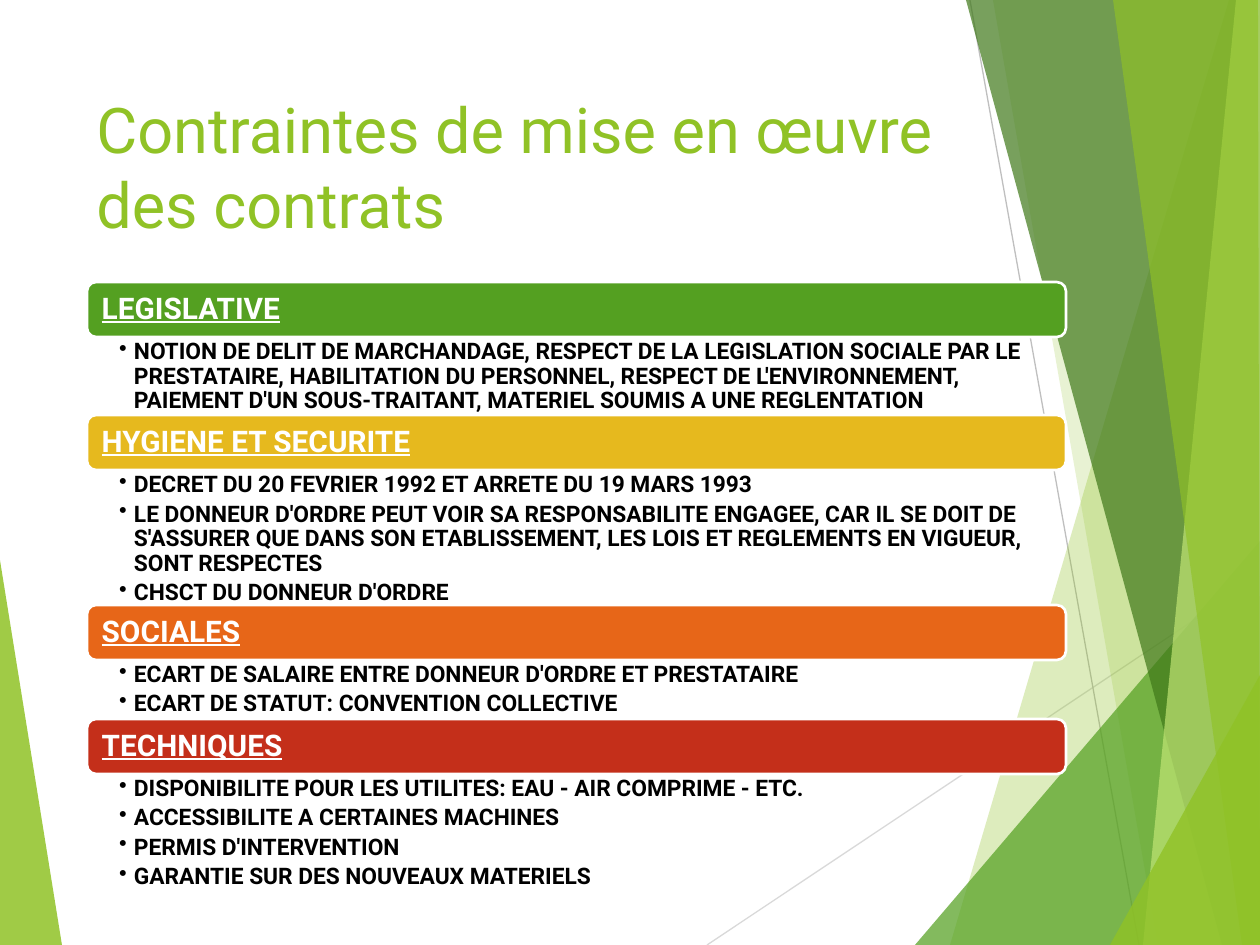
from lxml.etree import SubElement
from pptx import Presentation
from pptx.dml.color import RGBColor
from pptx.enum.shapes import MSO_CONNECTOR, MSO_SHAPE
from pptx.enum.text import MSO_ANCHOR, PP_ALIGN
from pptx.oxml.ns import qn
from pptx.util import Emu, Pt

SCALE = 914400 / 126  # EMU per px
COLORS = {
    "lime": "90C226", "green": "54A021", "forest": "3F7819", "pale": "C0E474",
    "yellow": "E6B91E", "orange": "E76618", "red": "C42F1A",
    "light_gray": "D9D9D9", "gray": "BFBFBF", "white": "FFFFFF", "black": "000000",
}


def px(*lengths):
    return [Emu(round(length * SCALE)) for length in lengths]


def write_text(shape, lines, frame_format, paragraph_format, font_format, color):
    frame = shape.text_frame
    for name, value in frame_format.items():
        setattr(frame, name, value)
    for index, line in enumerate(lines):
        paragraph = frame.add_paragraph() if index else frame.paragraphs[0]
        for name, value in paragraph_format.items():
            setattr(paragraph, name, value)
        run = paragraph.add_run()
        run.text = line
        for name, value in font_format.items():
            setattr(run.font, name, value)
        run.font.color.rgb = RGBColor.from_string(COLORS[color])


presentation = Presentation()
presentation.slide_width, presentation.slide_height = px(1260, 945)
slide = presentation.slides.add_slide(presentation.slide_layouts[6])
shapes = slide.shapes

# Background: thin lines first, then translucent facets
lines = [
    ((707, 945, 1260, 576), "light_gray"),
    ((970, 0, 1139, 945), "gray"),
]
for ends, color in lines:
    connector = shapes.add_connector(MSO_CONNECTOR.STRAIGHT, *px(*ends))
    connector.line.color.rgb = RGBColor.from_string(COLORS[color])
    connector.line.width = Pt(0.75)
    SubElement(connector._element.spPr, qn("a:effectLst"))

facets = [  # corners, color, opacity in percent
    ([(0, 560), (62, 945), (0, 945)], "lime", 85),
    ([(1229, 0), (950, 945), (1260, 945), (1260, 0)], "lime", 30),
    ([(993, 0), (1158, 945), (1260, 945), (1260, 0)], "lime", 20),
    ([(915, 945), (1260, 541), (1260, 945)], "green", 72),
    ([(966, 0), (1222, 945), (1260, 945), (1260, 0)], "forest", 70),
    ([(1236, 0), (1143, 945), (1260, 945), (1260, 0)], "pale", 70),
    ([(1113, 0), (1242, 945), (1260, 945), (1258, 0)], "lime", 65),
    ([(1110, 945), (1260, 675), (1260, 945)], "lime", 80),
]
for corners, color, opacity in facets:
    builder = shapes.build_freeform(*corners[0], scale=SCALE)
    builder.add_line_segments(corners[1:], close=True)
    facet = builder.convert_to_shape()
    facet.shadow.inherit = False
    facet.line.fill.background()
    facet.fill.solid()
    facet.fill.fore_color.rgb = RGBColor.from_string(COLORS[color])
    color_node = facet._element.spPr.find(qn("a:solidFill"))[0]
    SubElement(color_node, qn("a:alpha"), val=str(opacity * 1000))

# Title
title = shapes.add_textbox(*px(84, 84, 875, 181))
write_text(
    title, ["Contraintes de mise en œuvre des contrats"],
    {"word_wrap": True, "vertical_anchor": MSO_ANCHOR.TOP},
    {"alignment": PP_ALIGN.LEFT}, {"name": "Roboto", "size": Pt(36)}, "lime",
)

# Sections: a colored heading bar with its bullets below, stacked without gaps
sections = [  # heading, color, height of the bullets, bullets
    ("LEGISLATIVE", "green", 78, [
        "NOTION DE DELIT DE MARCHANDAGE, RESPECT DE LA LEGISLATION SOCIALE PAR LE "
        "PRESTATAIRE, HABILITATION DU PERSONNEL, RESPECT DE L'ENVIRONNEMENT, "
        "PAIEMENT D'UN SOUS-TRAITANT, MATERIEL SOUMIS A UNE REGLENTATION",
    ]),
    ("HYGIENE ET SECURITE", "yellow", 135, [
        "DECRET DU 20 FEVRIER 1992 ET ARRETE DU 19 MARS 1993",
        "LE DONNEUR D'ORDRE PEUT VOIR SA RESPONSABILITE ENGAGEE, CAR IL SE DOIT DE "
        "S'ASSURER QUE DANS SON ETABLISSEMENT, LES LOIS ET REGLEMENTS EN VIGUEUR, "
        "SONT RESPECTES",
        "CHSCT DU DONNEUR D'ORDRE",
    ]),
    ("SOCIALES", "orange", 59, [
        "ECART DE SALAIRE ENTRE DONNEUR D'ORDRE ET PRESTATAIRE",
        "ECART DE STATUT: CONVENTION COLLECTIVE",
    ]),
    ("TECHNIQUES", "red", 118, [
        "DISPONIBILITE POUR LES UTILITES: EAU - AIR COMPRIME - ETC.",
        "ACCESSIBILITE A CERTAINES MACHINES",
        "PERMIS D'INTERVENTION",
        "GARANTIE SUR DES NOUVEAUX MATERIELS",
    ]),
]
LEFT, WIDTH, BAR_HEIGHT, INDENT = 87, 979, 55, 15
margin_names = ("margin_left", "margin_top", "margin_right", "margin_bottom")
bar_frame = dict(zip(margin_names, px(12, 9, 12, 9)),
                 word_wrap=True, vertical_anchor=MSO_ANCHOR.MIDDLE)
bullet_frame = dict(zip(margin_names, px(32, 3, 16, 3)),
                    word_wrap=True, vertical_anchor=MSO_ANCHOR.TOP)
bar_paragraph = {"alignment": PP_ALIGN.LEFT, "line_spacing": 0.9}
bullet_paragraph = {**bar_paragraph, "level": 1, "space_after": Pt(2.7)}
bar_font = {"name": "Roboto", "size": Pt(17), "bold": True, "underline": True}
bullet_font = {"name": "Roboto", "size": Pt(13), "bold": True}

top = 282
for heading, color, height, bullets in sections:
    bar = shapes.add_shape(MSO_SHAPE.ROUNDED_RECTANGLE, *px(LEFT, top, WIDTH, BAR_HEIGHT))
    bar.shadow.inherit = False
    bar.fill.solid()
    bar.fill.fore_color.rgb = RGBColor.from_string(COLORS[color])
    bar.line.color.rgb = RGBColor.from_string(COLORS["white"])
    bar.line.width = Pt(1.5)
    write_text(bar, [heading], bar_frame, bar_paragraph, bar_font, "white")
    top += BAR_HEIGHT

    body = shapes.add_textbox(*px(LEFT, top, WIDTH, height))
    write_text(body, bullets, bullet_frame, bullet_paragraph, bullet_font, "black")
    for paragraph in body.text_frame.paragraphs:
        properties = paragraph._p.get_or_add_pPr()
        properties.set("marL", str(px(INDENT)[0]))
        properties.set("indent", str(px(-INDENT)[0]))
        SubElement(properties, qn("a:buChar"), char="•")
    top += height

presentation.save("out.pptx")
